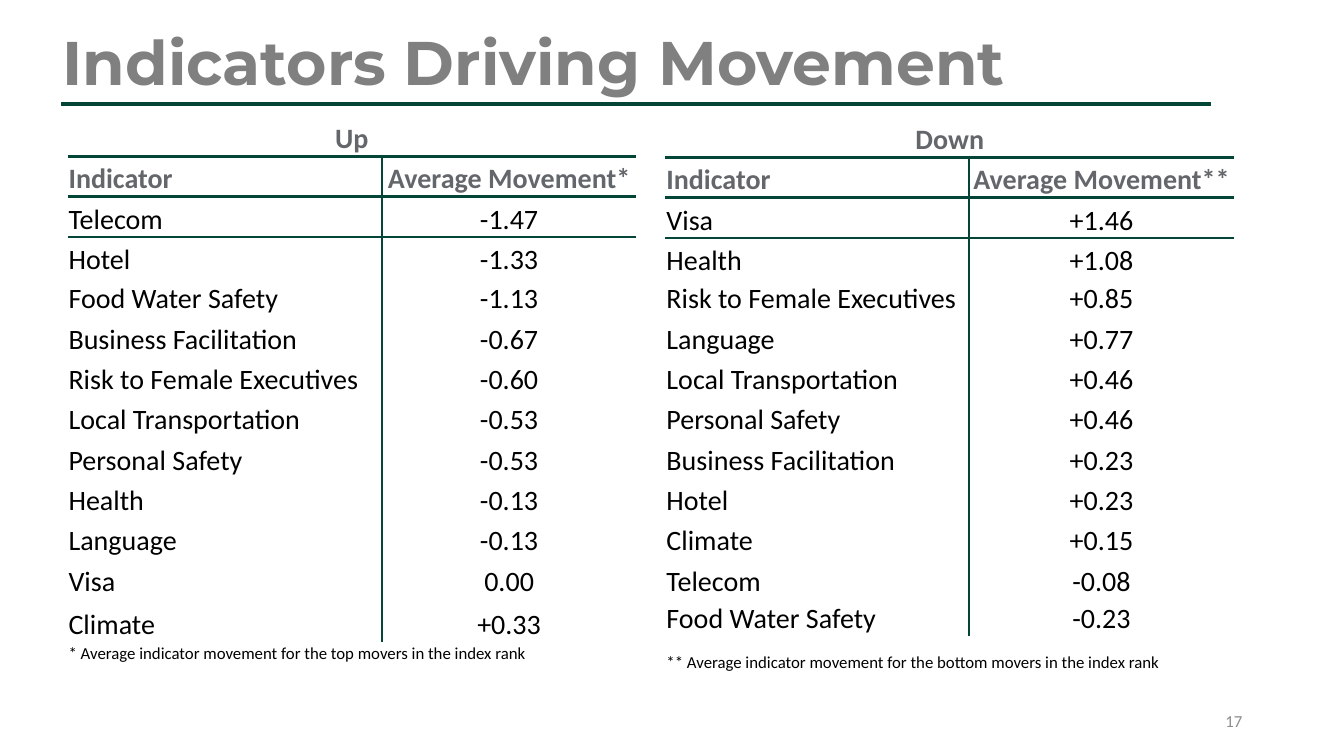
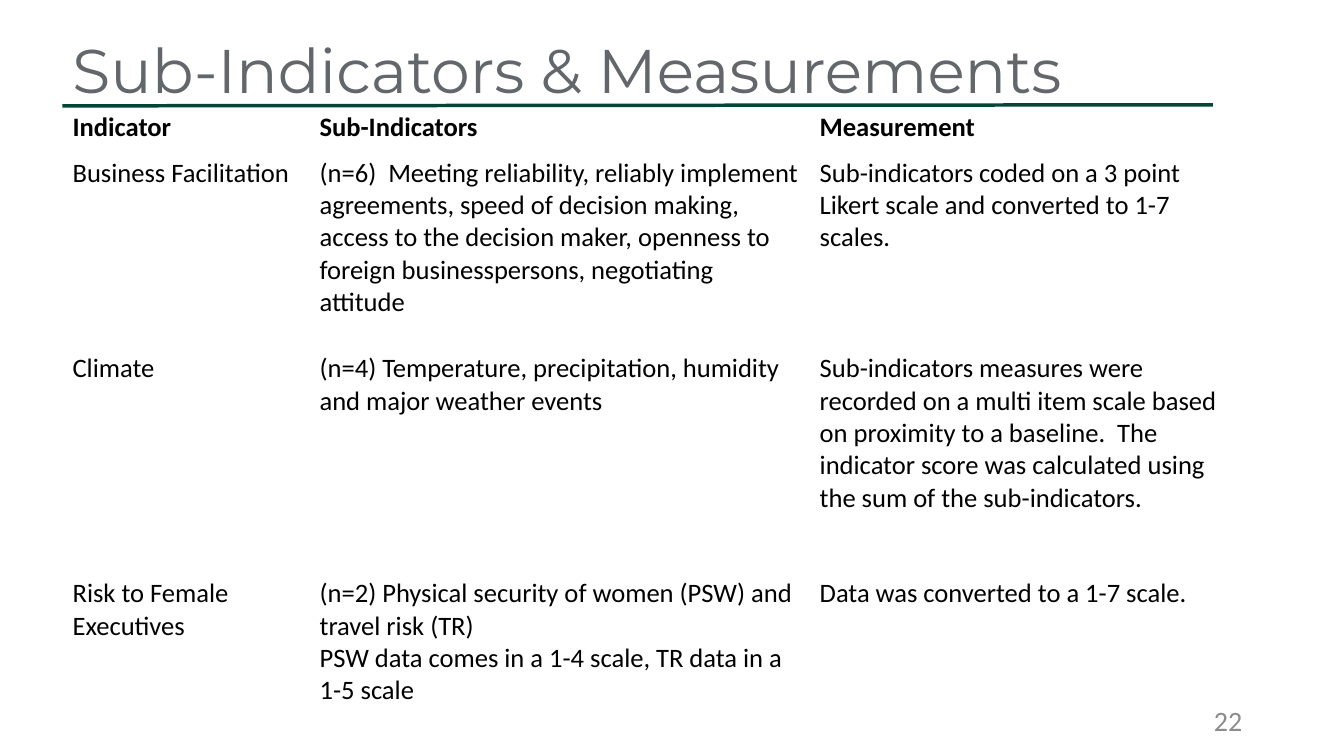
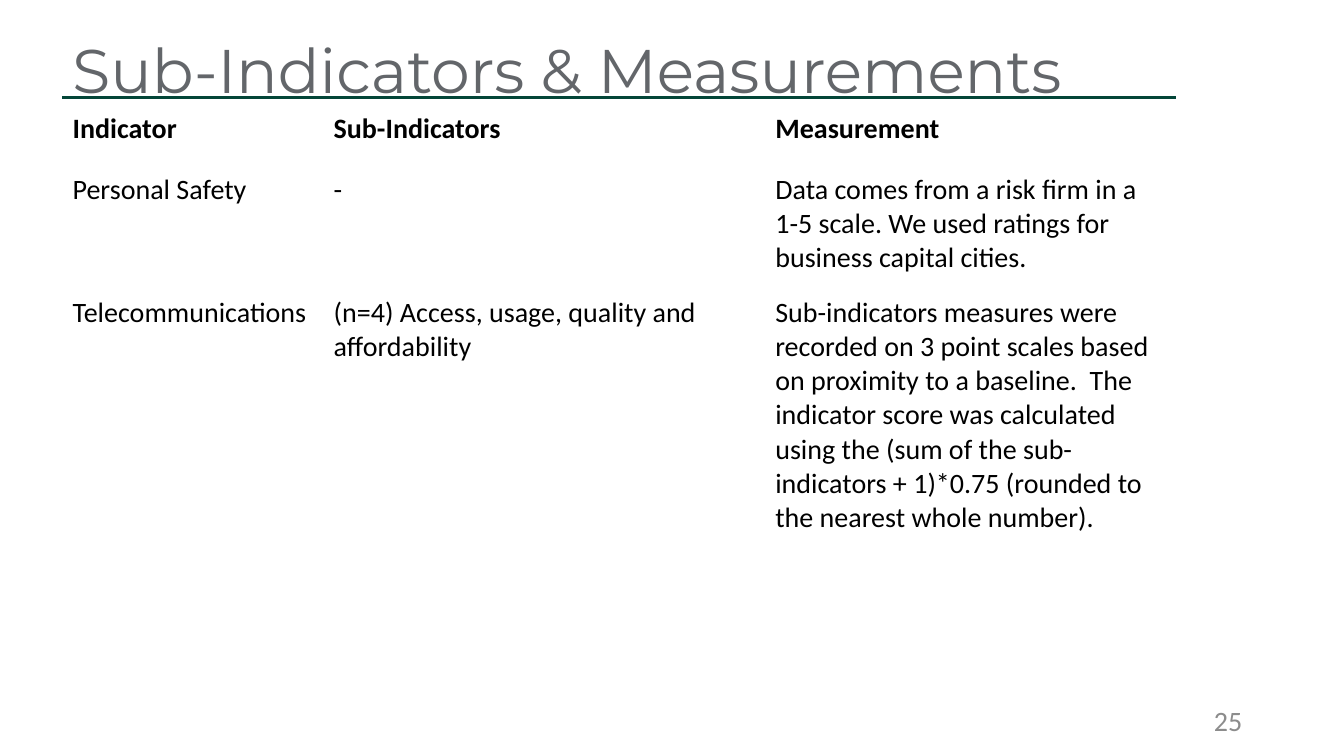
from lxml.etree import SubElement
from pptx import Presentation
from pptx.dml.color import RGBColor
from pptx.enum.shapes import MSO_CONNECTOR
from pptx.enum.text import MSO_ANCHOR, PP_ALIGN
from pptx.oxml import parse_xml
from pptx.oxml.ns import nsdecls, qn
from pptx.util import Pt

PX = 9144  # 100 px to the inch
COLORS = {"green": "034638", "slate": "63666A", "gray": "808080",
          "number": "8C8C8C", "black": "000000", "white": "FFFFFF"}
BODY, HEADING = "Calibri", "Montserrat"
NO_STYLE_GRID = "{2D5ABB26-0587-4C30-8999-92F81FD0307C}"
LEFT, CENTER, RIGHT = PP_ALIGN.LEFT, PP_ALIGN.CENTER, PP_ALIGN.RIGHT

MOVEMENT = {
    "title": "Indicators Driving Movement",
    "number": "17",
    "rule": (61, 103, 1201, 103),
    "tables": [
        {
            "heading": "Up", "at": (67, 115), "columns": (312, 252),
            "heights": [40] * 4 + [39] + [40] * 7 + [43, 22],
            "rows": [
                ("Indicator", "Average Movement*"),
                ("Telecom", "-1.47"),
                ("Hotel", "-1.33"),
                ("Food Water Safety", "-1.13"),
                ("Business Facilitation", "-0.67"),
                ("Risk to Female Executives", "-0.60"),
                ("Local Transportation", "-0.53"),
                ("Personal Safety", "-0.53"),
                ("Health", "-0.13"),
                ("Language", "-0.13"),
                ("Visa", "0.00"),
                ("Climate", "+0.33"),
            ],
            "note": "* Average indicator movement for the top movers in the index rank",
        },
        {
            "heading": "Down", "at": (660, 116), "columns": (301, 263),
            "heights": [40] * 4 + [38] + [40] * 7 + [37, 37],
            "rows": [
                ("Indicator", "Average Movement**"),
                ("Visa", "+1.46"),
                ("Health", "+1.08"),
                ("Risk to Female Executives", "+0.85"),
                ("Language", "+0.77"),
                ("Local Transportation", "+0.46"),
                ("Personal Safety", "+0.46"),
                ("Business Facilitation", "+0.23"),
                ("Hotel", "+0.23"),
                ("Climate", "+0.15"),
                ("Telecom", "-0.08"),
                ("Food Water Safety", "-0.23"),
            ],
            "note": "** Average indicator movement for the bottom movers in the index rank",
        },
    ],
}

MEASUREMENT_TITLE = "Sub-Indicators & Measurements"
MEASUREMENT_HEADER = ("Indicator", "Sub-Indicators", "Measurement")
MEASUREMENTS = [
    {
        "number": "22", "rule": (62, 105, 1203, 104), "at": (62, 105), "size": 19,
        "columns": (245, 496, 427), "heights": (46, 194, 223, 152),
        "rows": [
            ("Business Facilitation",
             "(n=6)  Meeting reliability, reliably implement agreements, speed of "
             "decision making, access to the decision maker, openness to foreign "
             "businesspersons, negotiating attitude",
             "Sub-indicators coded on a 3 point Likert scale and converted to 1-7 scales."),
            ("Climate",
             "(n=4) Temperature, precipitation, humidity and major weather events",
             "Sub-indicators measures were recorded on a multi item scale based on "
             "proximity to a baseline.  The indicator score was calculated using the "
             "sum of the sub-indicators."),
            ("Risk to Female Executives",
             "(n=2) Physical security of women (PSW) and travel risk (TR)\n"
             "PSW data comes in a 1-4 scale, TR data in a 1-5 scale",
             "Data was converted to a 1-7 scale."),
        ],
    },
    {
        "number": "25", "rule": (62, 97, 1166, 97), "at": (62, 106), "size": 20,
        "columns": (259, 438, 402), "heights": (60, 122, 251, 144),
        "rows": [
            ("Personal Safety", "-",
             "Data comes from a risk firm in a 1-5 scale. We used ratings for "
             "business capital cities."),
            ("Telecommunications",
             "(n=4) Access, usage, quality and affordability",
             "Sub-indicators measures were recorded on 3 point scales based on "
             "proximity to a baseline.  The indicator score was calculated using the "
             "(sum of the sub-indicators + 1)*0.75 (rounded to the nearest whole number)."),
            ("", "", ""),
        ],
    },
]


def write(frame, text, size=20, color="black", font=BODY, bold=False, align=LEFT, spacing=1.0):
    frame.text = text
    for paragraph in frame.paragraphs:
        paragraph.alignment = align
        paragraph.line_spacing = spacing
        paragraph.font.size = Pt(size)
        for run in paragraph.runs:
            run.font.size, run.font.bold, run.font.name = Pt(size), bold, font
            run.font.color.rgb = RGBColor.from_string(COLORS[color])


def add_text(slide, box, text, **style):
    frame = slide.shapes.add_textbox(*(n * PX for n in box)).text_frame
    frame.word_wrap = True
    frame.vertical_anchor = MSO_ANCHOR.MIDDLE
    write(frame, text, **style)


def add_rule(slide, ends):
    rule = slide.shapes.add_connector(MSO_CONNECTOR.STRAIGHT, *(n * PX for n in ends))
    rule.line.color.rgb = RGBColor.from_string(COLORS["green"])
    rule.line.width = Pt(2.5)
    SubElement(rule._element.spPr, qn("a:effectLst"))


def add_table(slide, at, columns, heights):
    box = (*at, sum(columns), sum(heights))
    table = slide.shapes.add_table(len(heights), len(columns), *(n * PX for n in box)).table
    table.first_row = table.horz_banding = False
    table._tbl.tblPr.find(qn("a:tableStyleId")).text = NO_STYLE_GRID
    for column, width in zip(table.columns, columns):
        column.width = width * PX
    for row, height in zip(table.rows, heights):
        row.height = height * PX
    return table


def set_borders(cell, sides):
    """Draw green borders on the sides, given in the order L, R, T, B."""
    for position, side in enumerate(sides):
        cell._tc.get_or_add_tcPr().insert(position, parse_xml(
            f'<a:ln{side} {nsdecls("a")} w="{Pt(2.25)}"><a:solidFill>'
            f'<a:srgbClr val="{COLORS["green"]}"/></a:solidFill></a:ln{side}>'))


def add_movement_table(slide, content):
    table = add_table(slide, content["at"], content["columns"], content["heights"])
    rows = [(content["heading"], ""), *content["rows"], (content["note"], "")]
    last = len(rows) - 1
    for r, row in enumerate(rows):
        whole = r in (0, last)
        if whole:
            table.cell(r, 0).merge(table.cell(r, 1))
        for c, text in enumerate(row):
            cell = table.cell(r, c)
            cell.fill.background()
            cell.vertical_anchor = MSO_ANCHOR.BOTTOM
            cell.margin_left = cell.margin_right = cell.margin_top = PX
            cell.margin_bottom = 0
            sides = "" if whole else "RL"[c]
            sides += ("T" if r in (1, 2) else "") + ("B" if r in (0, 1) else "")
            set_borders(cell, sides)
            write(cell.text_frame, text, size=12 if r == last else 20,
                  color="slate" if r < 2 else "black", bold=r < 2,
                  align=CENTER if c == 1 or r == 0 else LEFT)


def add_measurement_table(slide, content):
    table = add_table(slide, content["at"], content["columns"], content["heights"])
    for r, row in enumerate([MEASUREMENT_HEADER, *content["rows"]]):
        for c, text in enumerate(row):
            cell = table.cell(r, c)
            cell.fill.solid()
            cell.fill.fore_color.rgb = RGBColor.from_string(COLORS["white"])
            write(cell.text_frame, text, size=content["size"], bold=r == 0)


def add_frame(slide, title, title_box, rule, number, number_size, **title_style):
    """Add what all slides share: title, green rule and slide number."""
    add_text(slide, title_box, title, size=44, font=HEADING, spacing=0.9, **title_style)
    add_rule(slide, rule)
    add_text(slide, (942, 695, 300, 40), number, size=number_size, color="number", align=RIGHT)


def main():
    deck = Presentation()
    deck.slide_width, deck.slide_height = 1333 * PX, 750 * PX
    blank = deck.slide_layouts[6]

    slide = deck.slides.add_slide(blank)
    for content in MOVEMENT["tables"]:
        add_movement_table(slide, content)
    add_frame(slide, MOVEMENT["title"], (52, 16, 1109, 99), MOVEMENT["rule"],
              MOVEMENT["number"], 12, color="gray", bold=True)

    for content in MEASUREMENTS:
        slide = deck.slides.add_slide(blank)
        add_measurement_table(slide, content)
        add_frame(slide, MEASUREMENT_TITLE, (62, 0, 1150, 145), content["rule"],
                  content["number"], 20, color="slate")
    deck.save("out.pptx")


if __name__ == "__main__":
    main()
